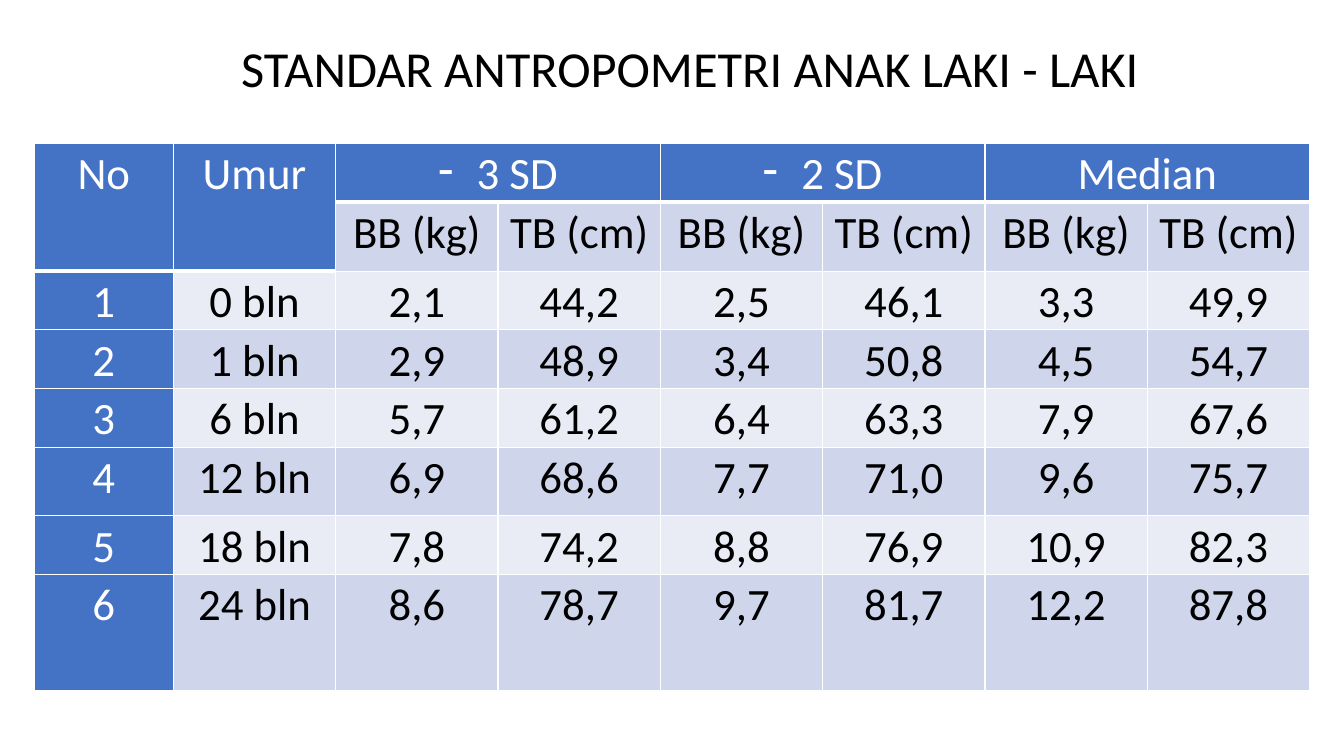
from lxml import etree
from pptx import Presentation
from pptx.dml.color import RGBColor
from pptx.enum import text as t
from pptx.oxml import ns
from pptx.util import Inches, Pt

COLORS = {
    "header": "4472C4",
    "band_dark": "CFD5EA",
    "band_light": "E9EBF5",
    "white": "FFFFFF",
    "black": "000000",
}


def write(frame, content, size=32, color="black", spacing=None, bullet=None):
    paragraph = frame.paragraphs[0]
    paragraph.alignment = t.PP_ALIGN.CENTER
    if spacing:
        paragraph.line_spacing = spacing
    if bullet:
        props = paragraph._p.get_or_add_pPr()
        props.set("marL", str(Inches(0.38)))
        props.set("indent", str(-Inches(0.38)))
        etree.SubElement(props, ns.qn("a:buChar")).set("char", bullet)
    run = paragraph.add_run()
    run.text = content
    run.font.name = "Calibri"
    run.font.size = Pt(size)
    run.font.color.rgb = RGBColor.from_string(COLORS[color])


def paint(cell, fill, bottom=1):
    props = cell._tc.get_or_add_tcPr()
    for edge, width in (("L", 1), ("R", 1), ("T", 1), ("B", bottom)):
        line = etree.SubElement(props, ns.qn(f"a:ln{edge}"), w=str(Pt(width)))
        solid = etree.SubElement(line, ns.qn("a:solidFill"))
        etree.SubElement(solid, ns.qn("a:srgbClr"), val=COLORS["white"])
    cell.fill.solid()
    cell.fill.fore_color.rgb = RGBColor.from_string(COLORS[fill])
    cell.margin_left = cell.margin_right = Inches(0.07)
    cell.margin_top = cell.margin_bottom = 0


prs = Presentation()
prs.slide_width, prs.slide_height = Inches(13.33), Inches(7.5)
slide = prs.slides.add_slide(prs.slide_layouts[6])

# Table grid
column_widths = [1.38] + [1.61] * 7
row_heights = [0.56, 0.69, 0.56, 0.56, 0.56, 0.68, 0.55, 1.15]
standards = slide.shapes.add_table(
    len(row_heights), len(column_widths),
    Inches(0.34), Inches(1.42), Inches(12.65), Inches(5.32)).table
for column, width in zip(standards.columns, column_widths):
    column.width = Inches(width)
for row, height in zip(standards.rows, row_heights):
    row.height = Inches(height)

# Cell fills: blue header and number column, banded body
for r in range(len(row_heights)):
    for c in range(len(column_widths)):
        if r == 0 or c == 0 or (r == 1 and c == 1):
            fill = "header"
        else:
            fill = "band_dark" if r % 2 else "band_light"
        paint(standards.cell(r, c), fill, bottom=3 if r == 0 else 1)

# Header: two tall cells, then three groups of two measures
for c, heading in enumerate(["No", "Umur"]):
    standards.cell(0, c).merge(standards.cell(1, c))
    write(standards.cell(0, c).text_frame, heading, color="white", spacing=1.07)

for i, (group, bullet) in enumerate([("3 SD", "-"), ("2 SD", "-"), ("Median", None)]):
    left = 2 + 2 * i
    standards.cell(0, left).merge(standards.cell(0, left + 1))
    write(standards.cell(0, left).text_frame, group, color="white", spacing=1.07,
          bullet=bullet)
    for offset, measure in enumerate(["BB (kg)", "TB (cm)"]):
        write(standards.cell(1, left + offset).text_frame, measure, spacing=1.07)

# Body: age, then weight and height for each group
ages = [
    ["0 bln", "2,1", "44,2", "2,5", "46,1", "3,3", "49,9"],
    ["1 bln", "2,9", "48,9", "3,4", "50,8", "4,5", "54,7"],
    ["6 bln", "5,7", "61,2", "6,4", "63,3", "7,9", "67,6"],
    ["12 bln", "6,9", "68,6", "7,7", "71,0", "9,6", "75,7"],
    ["18 bln", "7,8", "74,2", "8,8", "76,9", "10,9", "82,3"],
    ["24 bln", "8,6", "78,7", "9,7", "81,7", "12,2", "87,8"],
]
for number, values in enumerate(ages, start=1):
    for c, value in enumerate([str(number)] + values):
        write(standards.cell(number + 1, c).text_frame, value,
              color="black" if c else "white", spacing=1.07)

# Title
title = slide.shapes.add_textbox(
    Inches(0.94), Inches(0.32), Inches(11.81), Inches(0.71)).text_frame
title.word_wrap = True
title.auto_size = t.MSO_AUTO_SIZE.SHAPE_TO_FIT_TEXT
write(title, "STANDAR ANTROPOMETRI ANAK LAKI - LAKI", size=36)

prs.save("out.pptx")
